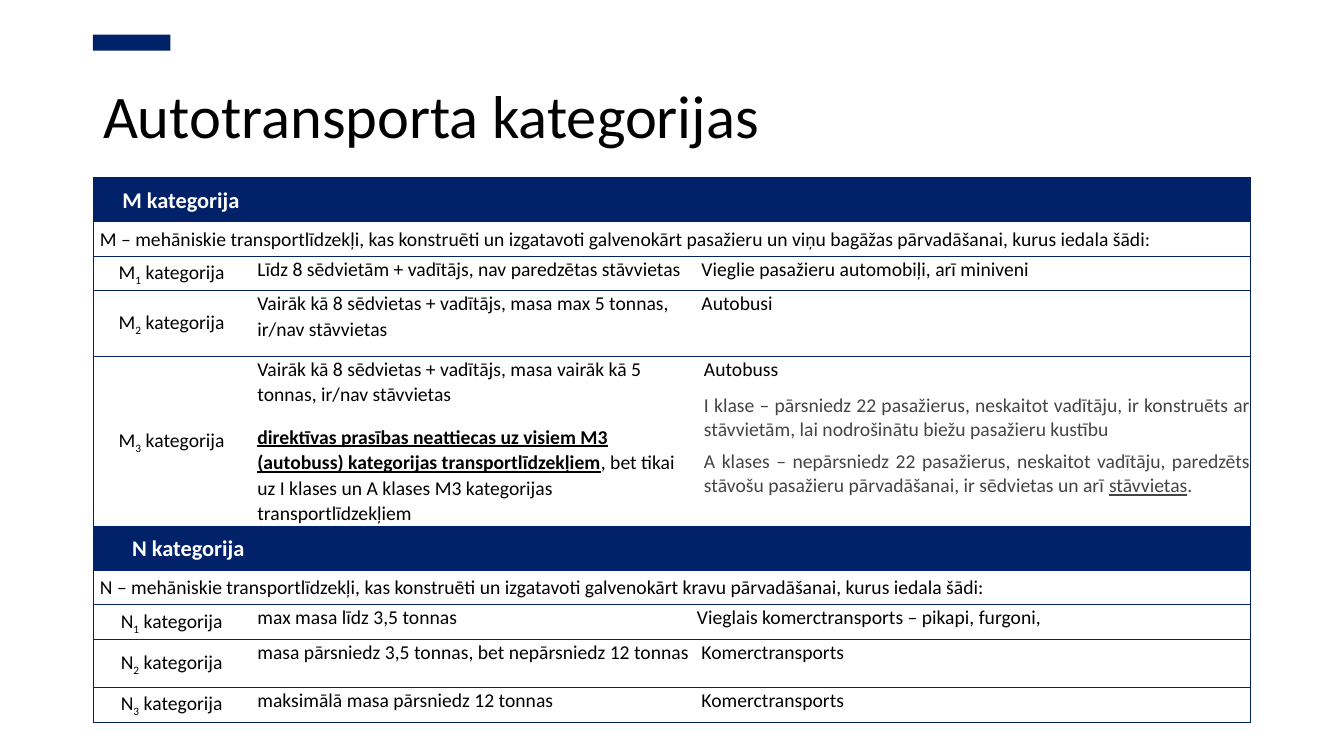
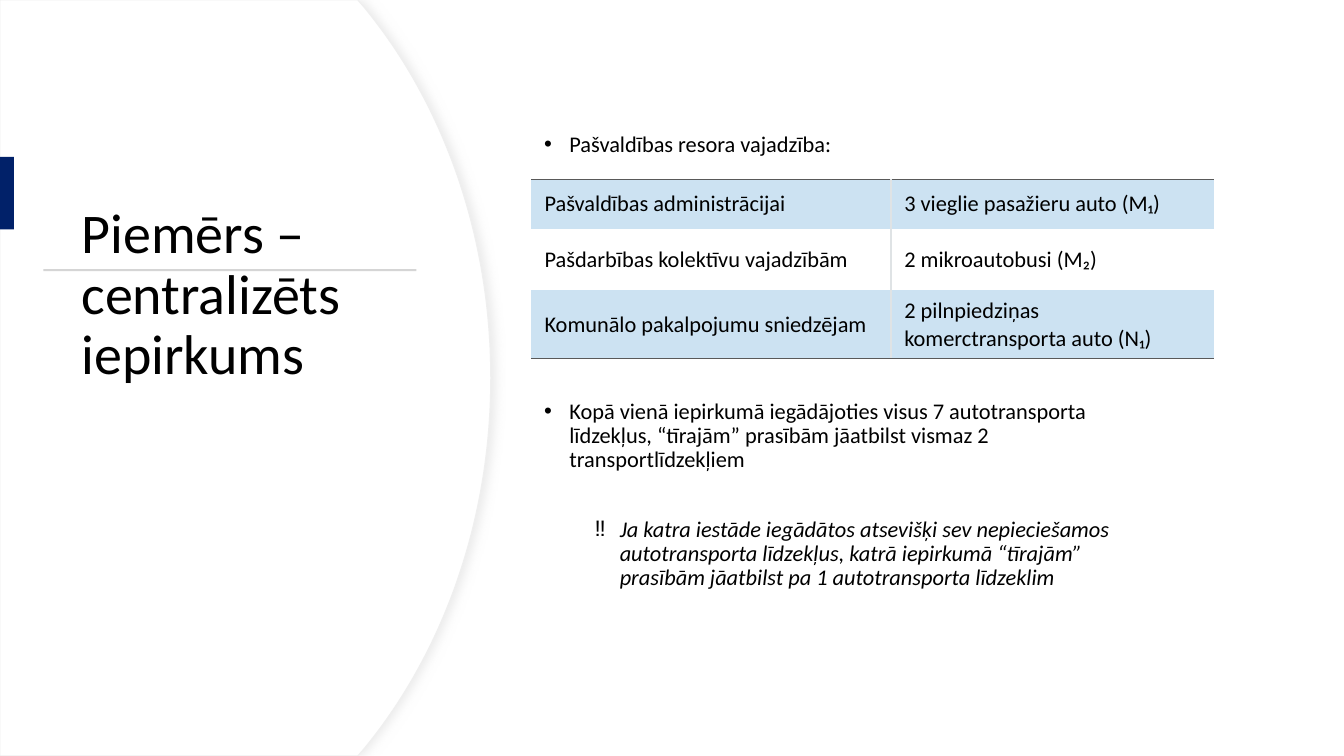
"""Build two slides on road vehicle categories and a joint purchase example."""
from dataclasses import dataclass

from lxml import etree
from pptx import Presentation
from pptx.dml.color import RGBColor
from pptx.enum.shapes import MSO_SHAPE
from pptx.enum.text import MSO_ANCHOR, MSO_AUTO_SIZE, PP_ALIGN
from pptx.oxml.ns import qn
from pptx.presentation import Presentation as Deck
from pptx.slide import Slide
from pptx.table import Table, _Cell
from pptx.text.text import TextFrame
from pptx.util import Pt

LEFT, CENTER, JUSTIFY = PP_ALIGN.LEFT, PP_ALIGN.CENTER, PP_ALIGN.JUSTIFY
TOP, MIDDLE, BOTTOM = MSO_ANCHOR.TOP, MSO_ANCHOR.MIDDLE, MSO_ANCHOR.BOTTOM
RECTANGLE = MSO_SHAPE.RECTANGLE
NO_AUTOFIT = MSO_AUTO_SIZE.NONE

FONT = "Calibri"
PLAIN_TABLE = "{2D5ABB26-0587-4C30-8999-92F81FD0307C}"
COLORS = {
    "navy": "012169",
    "black": "000000",
    "white": "FFFFFF",
    "text_grey": "444444",
    "rule": "D5D5D5",
    "panel_edge": "EFEFEF",
    "shadow": "D9D9D9",
    "band": "CCE2F2",
    "band_edge": "595959",
    "divider": "DFE3E5",
}


@dataclass(frozen=True)
class Span:
    text: str
    bold: bool = False
    underline: bool = False
    subscript: bool = False


@dataclass(frozen=True)
class Para:
    spans: tuple[Span, ...]
    size: float = 14
    color: str = "black"
    bold: bool = False
    italic: bool = False
    align: PP_ALIGN = LEFT
    indent: float = 0
    hanging: float = 0
    line: float = 1.07
    before: float = 6
    after: float = 6
    bullet: str = ""


@dataclass(frozen=True)
class Row:
    height: float
    cells: tuple[tuple[Para, ...], ...]
    heading: bool = False


@dataclass(frozen=True)
class Area:
    left: float
    top: float
    width: float
    height: float

    def lengths(self) -> tuple[Pt, Pt, Pt, Pt]:
        return Pt(self.left), Pt(self.top), Pt(self.width), Pt(self.height)


def rgb(name: str) -> RGBColor:
    return RGBColor.from_string(COLORS[name])


def plain(text: str, **style) -> Para:
    return Para((Span(text),), **style)


def heading_row(text: str, indent: float) -> Row:
    return Row(31.6, ((plain(text, size=16, color="white", bold=True, indent=indent),),), True)


def intro_row(text: str) -> Row:
    return Row(24.6, ((plain(text, align=JUSTIFY),),))


def category_row(height: float, letter: str, number: int,
                 limits: tuple[Para, ...], kinds: tuple[Para, ...]) -> Row:
    label = Para((Span(letter), Span(str(number), subscript=True), Span(" kategorija")), align=CENTER)
    return Row(height, ((label,), limits, kinds))


def class_note(*spans: Span) -> Para:
    return Para(spans, color="text_grey", align=JUSTIFY, indent=5, line=1, before=3, after=3)


CATEGORY_ROWS = (
    heading_row("M kategorija", 16),
    intro_row("M – mehāniskie transportlīdzekļi, kas konstruēti un izgatavoti galvenokārt "
              "pasažieru un viņu bagāžas pārvadāšanai, kurus iedala šādi:"),
    category_row(24.6, "M", 1,
                 (plain("Līdz 8 sēdvietām + vadītājs, nav paredzētas stāvvietas"),),
                 (plain("Vieglie pasažieru automobiļi, arī miniveni", indent=3.2),)),
    category_row(46.8, "M", 2,
                 (plain("Vairāk kā 8 sēdvietas + vadītājs, masa max 5 tonnas, ir/nav stāvvietas"),),
                 (plain("Autobusi", indent=3.2),)),
    category_row(121.4, "M", 3,
                 (plain("Vairāk kā 8 sēdvietas + vadītājs, masa vairāk kā 5 tonnas, ir/nav stāvvietas"),
                  Para((Span("direktīvas prasības neattiecas uz visiem M3 (autobuss) kategorijas "
                             "transportlīdzekļiem", bold=True, underline=True),
                        Span(", bet tikai uz I klases un A klases M3 kategorijas transportlīdzekļiem")))),
                 (plain("Autobuss", align=JUSTIFY, indent=5),
                  class_note(Span("I klase – pārsniedz 22 pasažierus, neskaitot vadītāju, ir konstruēts ar "
                                  "stāvvietām, lai nodrošinātu biežu pasažieru kustību")),
                  class_note(Span("A klases – nepārsniedz 22 pasažierus, neskaitot vadītāju, paredzēts "
                                  "stāvošu pasažieru pārvadāšanai, ir sēdvietas un arī "),
                             Span("stāvvietas", underline=True), Span(".")))),
    heading_row("N kategorija", 23),
    intro_row("N – mehāniskie transportlīdzekļi, kas konstruēti un izgatavoti galvenokārt "
              "kravu pārvadāšanai, kurus iedala šādi:"),
    category_row(24.6, "N", 1, (plain("max masa līdz 3,5 tonnas"),),
                 (plain("Vieglais komerctransports – pikapi, furgoni,"),)),
    category_row(34.6, "N", 2, (plain("masa pārsniedz 3,5 tonnas, bet nepārsniedz 12 tonnas"),),
                 (plain("Komerctransports", indent=3.2),)),
    category_row(24.6, "N", 3, (plain("maksimālā masa pārsniedz 12 tonnas"),),
                 (plain("Komerctransports", indent=3.2),)),
)

NEEDS = (
    (35.3, "Pašvaldības administrācijai", "3 vieglie pasažieru auto (M₁)"),
    (43.9, "Pašdarbības kolektīvu vajadzībām", "2 mikroautobusi (M₂)"),
    (48.6, "Komunālo pakalpojumu sniedzējam", "2 pilnpiedziņas komerctransporta auto (N₁)"),
)

BODY = (
    plain("Pašvaldības resora vajadzība:", size=16, indent=18, hanging=18, line=0.9,
          before=0, after=0, bullet="•"),
    plain("Kopā vienā iepirkumā iegādājoties visus 7 autotransporta līdzekļus, “tīrajām” "
          "prasībām jāatbilst vismaz 2 transportlīdzekļiem", size=16, indent=18, hanging=18,
          line=0.9, before=173.5, after=0, bullet="•"),
    plain("Ja katra iestāde iegādātos atsevišķi sev nepieciešamos autotransporta līdzekļus, "
          "katrā iepirkumā “tīrajām” prasībām jāatbilst pa 1 autotransporta līdzeklim", size=16,
          italic=True, indent=54, hanging=18, line=0.9, before=32.5, after=0, bullet="‼"),
)


def write_paras(frame: TextFrame, paras: tuple[Para, ...]) -> None:
    frame.word_wrap = True
    for index, item in enumerate(paras):
        para = frame.add_paragraph() if index else frame.paragraphs[0]
        para.alignment, para.line_spacing = item.align, item.line
        para.space_before, para.space_after = Pt(item.before), Pt(item.after)
        properties = para._p.get_or_add_pPr()
        properties.set("marL", str(Pt(item.indent)))
        properties.set("indent", str(-Pt(item.hanging)))
        if item.bullet:
            etree.SubElement(properties, qn("a:buFont")).set("typeface", "Arial")
            etree.SubElement(properties, qn("a:buChar")).set("char", item.bullet)
        font = para.font
        font.name, font.size = FONT, Pt(item.size)
        font.bold, font.italic = item.bold, item.italic
        font.color.rgb = rgb(item.color)
        for part in item.spans:
            span = para.add_run()
            span.text = part.text
            if part.bold:
                span.font.bold = True
            if part.underline:
                span.font.underline = True
            if part.subscript:
                span._r.get_or_add_rPr().set("baseline", "-25000")


def add_page(deck: Deck, title: str, area: Area, size: float, anchor: MSO_ANCHOR) -> Slide:
    page = deck.slides.add_slide(deck.slide_layouts[5])
    box = page.shapes.title
    box.left, box.top, box.width, box.height = area.lengths()
    frame = box.text_frame
    frame.auto_size, frame.vertical_anchor = NO_AUTOFIT, anchor
    write_paras(frame, (plain(title, size=size, line=0.9, before=0, after=0),))
    return page


def add_block(page: Slide, area: Area, color: str) -> None:
    block = page.shapes.add_shape(RECTANGLE, *area.lengths())
    block.shadow.inherit = False
    block.fill.solid()
    block.fill.fore_color.rgb = rgb(color)
    block.line.fill.background()


def add_plain_table(page: Slide, left: float, top: float,
                    widths: tuple[float, ...], heights: list[float]) -> Table:
    area = Area(left, top, sum(widths), sum(heights))
    table = page.shapes.add_table(len(heights), len(widths), *area.lengths()).table
    table.first_row = table.horz_banding = False
    table._tbl.tblPr.find(qn("a:tableStyleId")).text = PLAIN_TABLE
    for column, width in zip(table.columns, widths):
        column.width = Pt(width)
    for row, height in zip(table.rows, heights):
        row.height = Pt(height)
    return table


def style_cell(cell: _Cell, fill: str, borders: dict[str, str], width: float) -> None:
    if fill:
        cell.fill.solid()
        cell.fill.fore_color.rgb = rgb(fill)
    else:
        cell.fill.background()
    properties = cell._tc.get_or_add_tcPr()
    for index, side in enumerate(side for side in "LRTB" if side in borders):
        line = etree.Element(qn(f"a:ln{side}"), w=str(Pt(width)))
        solid = etree.SubElement(line, qn("a:solidFill"))
        etree.SubElement(solid, qn("a:srgbClr")).set("val", COLORS[borders[side]])
        properties.insert(index, line)


def fill_cell(cell: _Cell, paras: tuple[Para, ...], anchor: MSO_ANCHOR,
              side: float, edge: float) -> None:
    cell.vertical_anchor = anchor
    cell.margin_left = cell.margin_right = Pt(side)
    cell.margin_top = cell.margin_bottom = Pt(edge)
    write_paras(cell.text_frame, paras)


def add_category_table(page: Slide) -> None:
    widths = (112.5, 319, 395.5)
    last = len(widths) - 1
    table = add_plain_table(page, 66.4, 126.8, widths, [row.height for row in CATEGORY_ROWS])
    for index, row in enumerate(CATEGORY_ROWS):
        merged = len(row.cells) == 1
        for column in range(len(widths)):
            sides = "TB" + "L" * (column == 0) + "R" * (merged or column == last)
            style_cell(table.cell(index, column), "navy" if row.heading else "",
                       dict.fromkeys(sides, "navy"), 0.5)
        if merged:
            table.cell(index, 0).merge(table.cell(index, last))
        for column, paras in enumerate(row.cells):
            fill_cell(table.cell(index, column), paras, TOP if column else MIDDLE,
                      0 if column == last else 5, 0)


def add_needs_table(page: Slide) -> None:
    table = add_plain_table(page, 379.4, 128.2, (257, 231), [need[0] for need in NEEDS])
    for index, (_, *texts) in enumerate(NEEDS):
        for column, text in enumerate(texts):
            borders = {"L" if column else "R": "divider"}
            if index == 0:
                borders["T"] = "band_edge"
            if index == len(NEEDS) - 1:
                borders["B"] = "band_edge"
            cell = table.cell(index, column)
            style_cell(cell, "" if index % 2 else "band", borders, 1)
            fill_cell(cell, (plain(text, size=16, line=1, before=0, after=0),), MIDDLE, 9.6, 5)


def add_curved_panel(page: Slide) -> None:
    steps, middle, height = 40, 270, 540
    curve = ((260.6, 5.8), (316, 73.4), (350.6, 167), (350.6, middle))
    upper = []
    for step in range(steps + 1):
        t = step / steps
        weights = ((1 - t) ** 3, 3 * t * (1 - t) ** 2, 3 * t * t * (1 - t), t ** 3)
        upper.append(tuple(sum(w * point[axis] for w, point in zip(weights, curve)) for axis in (0, 1)))
    upper.insert(0, (255.6, 0))
    lower = [(x, height - y) for x, y in reversed(upper)]
    outline = [(Pt(x), Pt(y)) for x, y in upper + lower + [(0, height)]]
    builder = page.shapes.build_freeform(0, 0, scale=1.0)
    builder.add_line_segments(outline, close=True)
    panel = builder.convert_to_shape()
    panel.fill.solid()
    panel.fill.fore_color.rgb = rgb("white")
    panel.line.color.rgb = rgb("panel_edge")
    panel.line.width = Pt(0.75)
    panel.shadow.inherit = False
    effects = panel._element.spPr.find(qn("a:effectLst"))
    shadow = etree.SubElement(effects, qn("a:outerShdw"), blurRad=str(Pt(7)), dist=str(Pt(3)), dir="0")
    color = etree.SubElement(shadow, qn("a:srgbClr"), val=COLORS["shadow"])
    etree.SubElement(color, qn("a:alpha"), val="50000")
    page.shapes._spTree.insert(2, panel._element)


def main() -> None:
    deck = Presentation()
    deck.slide_width, deck.slide_height = Pt(960), Pt(540)

    page = add_page(deck, "Autotransporta kategorijas", Area(66.4, 54, 827, 57.6), 43.2, BOTTOM)
    add_block(page, Area(66.4, 24.8, 55.4, 11.4), "navy")
    add_category_table(page)

    page = add_page(deck, "Piemērs – centralizēts iepirkums", Area(51, 127.4, 247.7, 168.5), 40, MIDDLE)
    add_curved_panel(page)
    add_block(page, Area(0, 112, 10, 52), "navy")
    add_block(page, Area(31, 192.2, 266.4, 1.44), "rule")
    box = page.shapes.add_textbox(*Area(381.6, 91.4, 447.8, 367.2).lengths())
    write_paras(box.text_frame, BODY)
    add_needs_table(page)

    deck.save("out.pptx")


if __name__ == "__main__":
    main()
